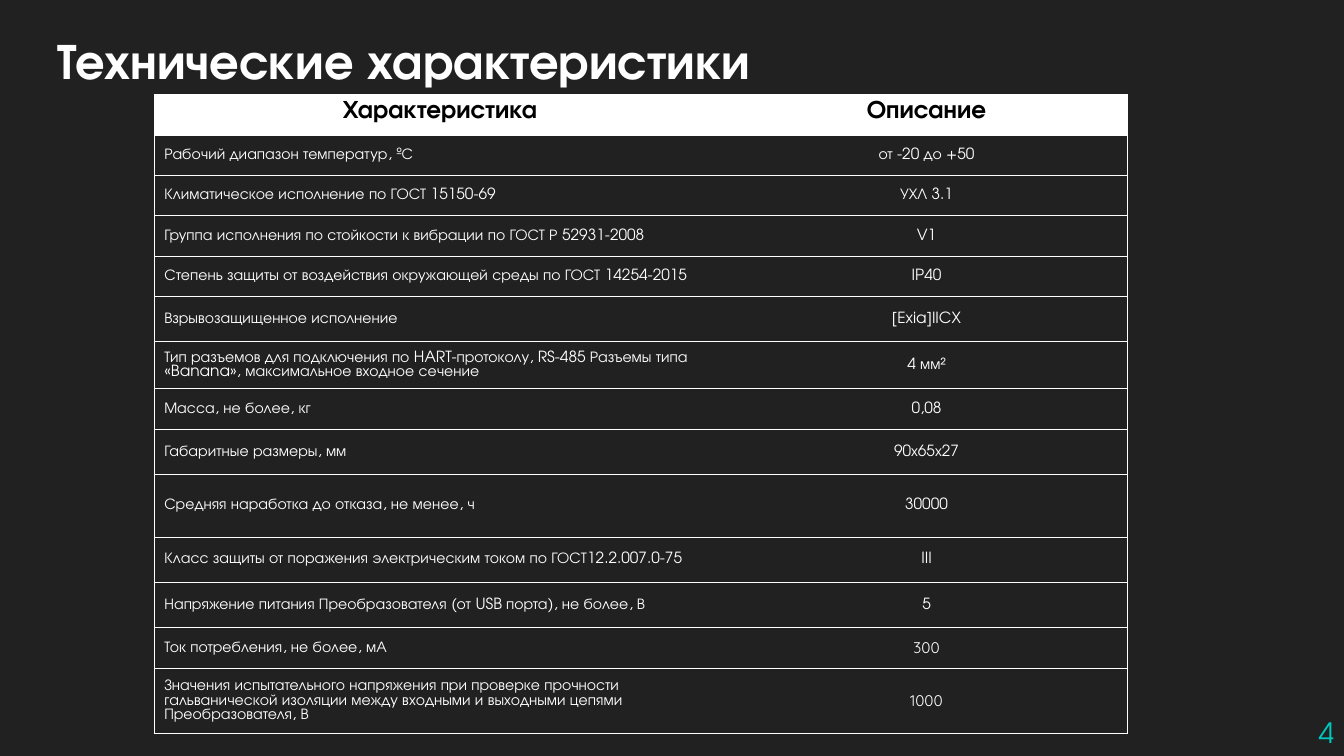
from lxml import etree
from pptx import Presentation, util as u
from pptx.dml.color import RGBColor
from pptx.enum import text
from pptx.oxml import ns

WIDTH, HEIGHT = 13.33, 7.5
FONT, NUMBER_FONT = "TeX Gyre Adventor", "Quicksand"
WHITE, BLACK, DARK, TEAL = "FFFFFF", "000000", "212121", "00C6BB"
LEFT, CENTER, RIGHT = text.PP_ALIGN.LEFT, text.PP_ALIGN.CENTER, text.PP_ALIGN.RIGHT
MIDDLE, BOTTOM, TOP = (text.MSO_ANCHOR.MIDDLE, text.MSO_ANCHOR.BOTTOM,
                       text.MSO_ANCHOR.TOP)

COLUMNS = [5.67, 3.98]
HEADER = ("Характеристика", "Описание")
HEADER_HEIGHT = 0.4
# name, value, row height, font of the value
ROWS = [
    ("Рабочий диапазон температур, ºС", "от -20 до +50", 0.4, FONT),
    ("Климатическое исполнение по ГОСТ 15150-69", "УХЛ 3.1", 0.4, FONT),
    ("Группа исполнения по стойкости к вибрации по ГОСТ Р 52931-2008",
     "V1", 0.4, FONT),
    ("Степень защиты от воздействия окружающей среды по ГОСТ 14254-2015",
     "IP40", 0.4, FONT),
    ("Взрывозащищенное исполнение", "[Exia]IICX", 0.45, FONT),
    ("Тип разъемов для подключения по HART-протоколу, RS-485 Разъемы типа "
     "«Banana», максимальное входное сечение", "4 мм²", 0.4, FONT),
    ("Масса, не более, кг", "0,08", 0.4, FONT),
    ("Габаритные размеры, мм", "90х65х27", 0.45, FONT),
    ("Средняя наработка до отказа, не менее, ч", "30000", 0.62, FONT),
    ("Класс защиты от поражения электрическим током по ГОСТ12.2.007.0-75",
     "III", 0.45, FONT),
    ("Напряжение питания Преобразователя (от USB порта), не более, В",
     "5", 0.45, FONT),
    ("Ток потребления, не более, мА", "300", 0.4, NUMBER_FONT),
    ("Значения испытательного напряжения при проверке прочности "
     "гальванической изоляции между входными и выходными цепями "
     "Преобразователя, В", "1000", 0.53, NUMBER_FONT),
]


def color(value):
    return RGBColor.from_string(value)


def write(frame, words, size=11, fill=WHITE, bold=False, align=LEFT, font=FONT):
    para = frame.paragraphs[0]
    para.alignment = align
    span = para.add_run()
    span.text = words
    span.font.size, span.font.bold, span.font.name = u.Pt(size), bold, font
    span.font.color.rgb = color(fill)
    return span


def add_text_shadow(span):
    effects = etree.Element(ns.qn("a:effectLst"))
    shadow = etree.SubElement(effects, ns.qn("a:outerShdw"), blurRad="38100",
                              dist="38100", dir="2700000", algn="tl")
    tone = etree.SubElement(shadow, ns.qn("a:srgbClr"), val=BLACK)
    etree.SubElement(tone, ns.qn("a:alpha"), val="43000")
    span.font.fill  # the fill element comes right before the effects
    span.font._element.find(ns.qn("a:solidFill")).addnext(effects)


def set_borders(cell, visible):
    """Draw the sides named in visible (L, R, T, B) and clear the others."""
    properties = cell._tc.get_or_add_tcPr()
    for side in "LRTB":
        line = etree.SubElement(properties, ns.qn(f"a:ln{side}"),
                                w=str(u.Pt(0.75)))
        if side in visible:
            paint = etree.SubElement(line, ns.qn("a:solidFill"))
            etree.SubElement(paint, ns.qn("a:srgbClr"), val=WHITE)
        else:
            etree.SubElement(line, ns.qn("a:noFill"))


def fill_title(page, left, top, width, height):
    title = page.shapes.title
    title.left, title.top = u.Inches(left), u.Inches(top)
    title.width, title.height = u.Inches(width), u.Inches(height)
    frame = title.text_frame
    frame.vertical_anchor, frame.word_wrap = BOTTOM, True
    frame.auto_size = text.MSO_AUTO_SIZE.NONE
    add_text_shadow(write(frame, "Технические характеристики", size=36, bold=True))


def add_page_number(page, left, top, side):
    box = page.shapes.add_textbox(*map(u.Inches, (left, top, side, side)))
    frame = box.text_frame
    frame.word_wrap, frame.vertical_anchor = True, BOTTOM
    frame.margin_bottom = u.Inches(0.01)
    write(frame, "4", size=20, fill=TEAL, align=RIGHT)


def add_characteristics(page, left, top):
    heights = [HEADER_HEIGHT] + [row[2] for row in ROWS]
    table = page.shapes.add_table(
        len(heights), len(COLUMNS),
        *map(u.Inches, (left, top, sum(COLUMNS), sum(heights)))).table
    table.first_row = table.horz_banding = False
    for column, width in zip(table.columns, COLUMNS):
        column.width = u.Inches(width)
    for row, height in zip(table.rows, heights):
        row.height = u.Inches(height)

    for index, words in enumerate(HEADER):
        cell = table.cell(0, index)
        set_borders(cell, "LR"[index] + "TB")
        cell.fill.solid()
        cell.fill.fore_color.rgb = color(WHITE)
        cell.vertical_anchor = TOP
        write(cell.text_frame, words, size=18, fill=BLACK, bold=True, align=CENTER)

    for number, (name, value, _, value_font) in enumerate(ROWS, 1):
        contents = ((name, LEFT, FONT), (value, CENTER, value_font))
        for index, (words, align, font) in enumerate(contents):
            cell = table.cell(number, index)
            set_borders(cell, "LR"[index] + "TB")
            cell.fill.background()
            cell.vertical_anchor = MIDDLE
            write(cell.text_frame, words, align=align, font=font)


def main():
    deck = Presentation()
    deck.slide_width, deck.slide_height = u.Inches(WIDTH), u.Inches(HEIGHT)
    page = deck.slides.add_slide(deck.slide_layouts[5])
    page.background.fill.solid()
    page.background.fill.fore_color.rgb = color(DARK)
    fill_title(page, 0.47, 0.47, 12.4, 0.47)
    add_page_number(page, WIDTH - 0.47, 6.97, 0.47)
    add_characteristics(page, 1.53, 0.94)
    deck.save("out.pptx")


if __name__ == "__main__":
    main()
